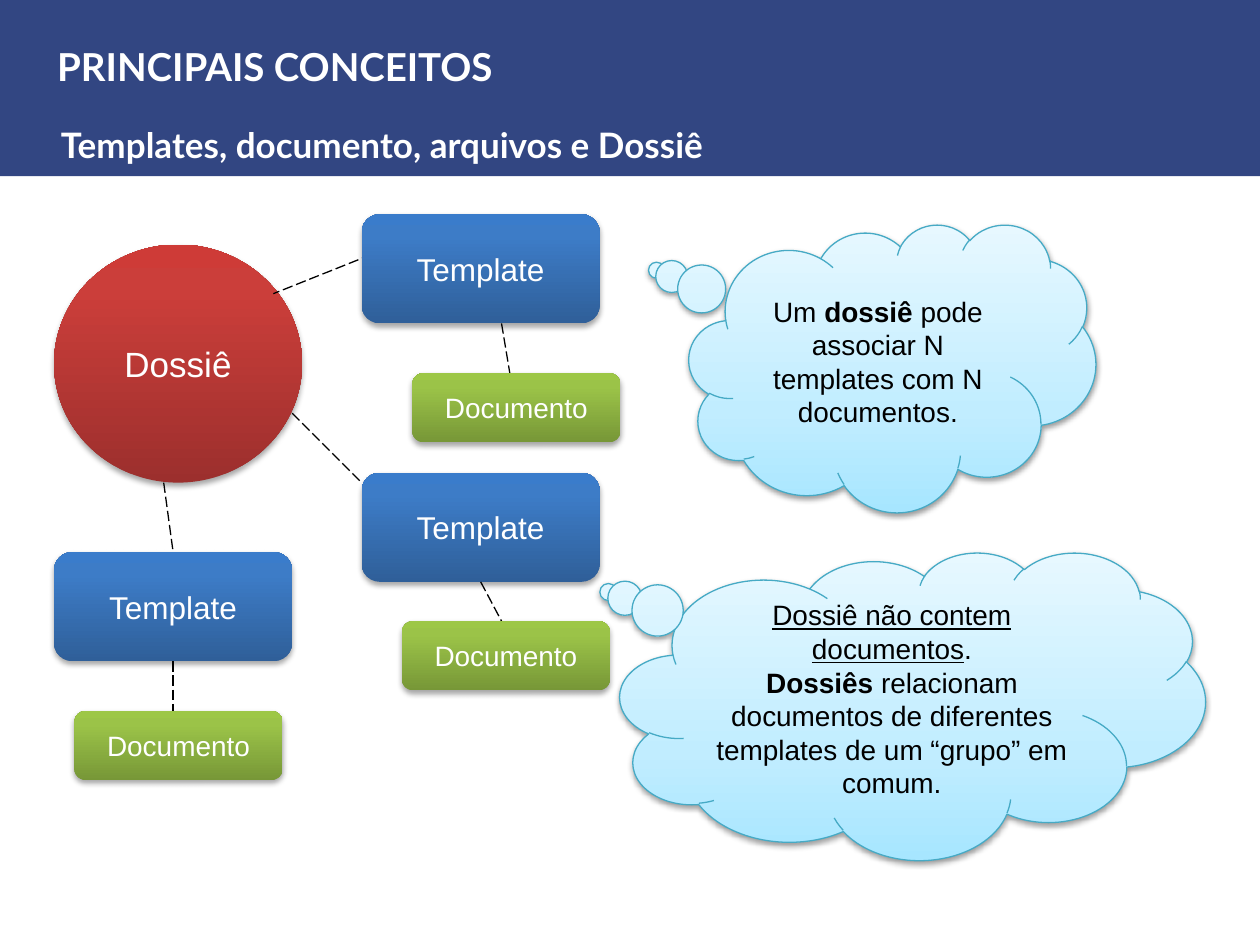
from copy import deepcopy
from lxml.etree import SubElement
from pptx import Presentation
from pptx.dml.color import RGBColor
from pptx.enum.dml import MSO_LINE
from pptx.enum.shapes import MSO_CONNECTOR, MSO_SHAPE
from pptx.enum.text import MSO_ANCHOR, MSO_AUTO_SIZE, PP_ALIGN
from pptx.oxml.ns import qn
from pptx.util import Cm, Pt


def color(value):
    """Turn a hex string into a colour."""
    return RGBColor.from_string(value)


class ConceptSlide:
    """Hold the style of the concept map and the slide being drawn."""

    navy, white, black, cloud_edge = "324682", "FFFFFF", "000000", "46AAC5"
    red = [(0, "9C2F2D"), (0.8, "CB3E3A"), (1, "CE3B37")]
    blue = [(0, "2F5F99"), (0.8, "3D7CC7"), (1, "3A7CCB")]
    green = [(0, "779737"), (0.8, "9BC348"), (1, "9DC746")]
    sky = [(0, "A7E6FF"), (0.35, "C1EDFF"), (1, "E7F8FF")]
    heading_font, body_font = "Lato", "Arial"

    def __init__(self, deck):
        """Add a title-only slide to the deck."""
        self.slide = deck.slides.add_slide(deck.slide_layouts[5])

    def run(self, paragraph, text, size, font, ink, bold=False, underline=False):
        """Add one formatted run to a paragraph."""
        run = paragraph.add_run()
        run.text = text
        run.font.size, run.font.name = Pt(size), font
        run.font.bold, run.font.underline = bold, underline
        run.font.color.rgb = color(ink)

    def band(self, width, height):
        """Draw the header band behind the title."""
        band = self.slide.shapes.add_shape(MSO_SHAPE.RECTANGLE, 0, 0, Cm(width), Cm(height))
        band.shadow.inherit = False
        band.fill.solid()
        band.fill.fore_color.rgb = color(self.navy)
        band.line.fill.background()
        self.slide.shapes.title._element.addprevious(band._element)

    def heading(self, holder, text, size, box):
        """Place a header text and return its paragraph."""
        holder.left, holder.top, holder.width, holder.height = map(Cm, box)
        frame = holder.text_frame
        frame.word_wrap = True
        frame.auto_size = MSO_AUTO_SIZE.NONE
        frame.vertical_anchor = MSO_ANCHOR.TOP
        paragraph = frame.paragraphs[0]
        paragraph.alignment = PP_ALIGN.LEFT
        self.run(paragraph, text, size, self.heading_font, self.white, bold=True)
        return paragraph

    def title(self, text, box):
        """Fill and place the title."""
        self.heading(self.slide.shapes.title, text, 22, box)

    def subtitle(self, text, box):
        """Add the second header line."""
        holder = self.slide.shapes.add_textbox(*map(Cm, box))
        self.heading(holder, text, 20, box).line_spacing = Pt(35)

    def shadow(self, shape, distance, opacity):
        """Give a shape a soft shadow below it."""
        shape.shadow.inherit = False
        effects = shape._element.spPr.find(qn("a:effectLst"))
        outer = SubElement(effects, qn("a:outerShdw"), blurRad="40000", dist=str(distance),
                           dir="5400000", rotWithShape="0")
        ink = SubElement(outer, qn("a:srgbClr"), val=self.black)
        SubElement(ink, qn("a:alpha"), val=str(opacity * 1000))

    def node(self, kind, box, paragraphs, size, stops, ink=white, edge=None):
        """Draw a gradient shape with centred text."""
        shape = self.slide.shapes.add_shape(kind, *map(Cm, box))
        shape.fill.gradient()
        shape.fill.gradient_angle = 90
        stop_list = shape._element.spPr.find(".//" + qn("a:gsLst"))
        stop_list.append(deepcopy(stop_list[0]))
        for stop, (position, tone) in zip(shape.fill.gradient_stops, stops):
            stop.position = position
            stop.color.rgb = color(tone)
        if edge:
            shape.line.color.rgb = color(edge)
            shape.line.width = Pt(0.75)
        else:
            shape.line.fill.background()
        self.shadow(shape, 20000 if edge else 23000, 38 if edge else 35)
        frame = shape.text_frame
        frame.word_wrap = True
        frame.vertical_anchor = MSO_ANCHOR.MIDDLE
        for index, runs in enumerate(paragraphs):
            paragraph = frame.add_paragraph() if index else frame.paragraphs[0]
            paragraph.alignment = PP_ALIGN.CENTER
            for text, style in runs:
                self.run(paragraph, text, size, self.body_font, ink, **style)
        return shape

    def dossier(self, left, top):
        """Draw the dossier circle."""
        return self.node(MSO_SHAPE.OVAL, (left, top, 5, 4.8), [[("Dossiê", {})]], 20, self.red)

    def template(self, left, top):
        """Draw a template box."""
        return self.node(MSO_SHAPE.ROUNDED_RECTANGLE, (left, top, 4.8, 2.2),
                         [[("Template", {})]], 18, self.blue)

    def document(self, left, top):
        """Draw a document box."""
        return self.node(MSO_SHAPE.ROUNDED_RECTANGLE, (left, top, 4.2, 1.4),
                         [[("Documento", {})]], 16, self.green)

    def thought(self, box, tail, paragraphs):
        """Draw a thought cloud with its tail."""
        cloud = self.node(MSO_SHAPE.CLOUD_CALLOUT, box, paragraphs, 16, self.sky,
                          self.black, self.cloud_edge)
        cloud.adjustments[0], cloud.adjustments[1] = tail

    def link(self, start, end, source=None, target=None):
        """Draw a dashed link, joined to a source's bottom or a target's top."""
        line = self.slide.shapes.add_connector(MSO_CONNECTOR.STRAIGHT, *map(Cm, start + end))
        line.line.color.rgb = color(self.black)
        line.line.width = Pt(0.75)
        line.line.dash_style = MSO_LINE.LONG_DASH
        SubElement(line._element.spPr, qn("a:effectLst"))
        if source is not None:
            line.begin_connect(source, 2)
        if target is not None:
            line.end_connect(target, 0)


def main():
    """Build the slide and save it."""
    deck = Presentation()
    deck.slide_width, deck.slide_height = Cm(25.4), Cm(19.05)
    page = ConceptSlide(deck)
    bold, underlined = {"bold": True}, {"underline": True}

    page.band(25.4, 3.55)
    page.title("PRINCIPAIS CONCEITOS", (0.9, 0.74, 20.8, 1.2))
    page.subtitle("Templates, documento, arquivos e Dossiê", (0.98, 1.98, 16.87, 1.5))

    page.dossier(1.09, 4.93)
    page.link((5.89, 8.33), (7.29, 9.73))
    page.link((7.49, 5.13), (5.51, 5.92))
    page.thought((13.89, 4.52, 8.2, 5.8), (-0.58, -0.34), [
        [("Um ", {}), ("dossiê", bold), (" pode associar N templates com N documentos.", {})]])
    page.thought((12.5, 11.13, 11.8, 6.2), (-0.52, -0.37), [
        [("Dossiê não contem documentos", underlined), (".", {})],
        [("Dossiês ", bold),
         ("relacionam documentos de diferentes templates de um “grupo” em comum.", {})]])

    page.template(7.29, 4.32)
    middle_template = page.template(7.29, 9.53)
    lower_template = page.template(1.09, 11.13)
    page.link((3.3, 9.73), (3.49, 11.13), target=lower_template)
    page.link((3.49, 13.33), (3.49, 14.33), source=lower_template)
    page.link((9.69, 11.73), (10.11, 12.52), source=middle_template)
    page.link((10.11, 6.52), (10.31, 7.72))
    for left, top in ((1.5, 14.33), (8.1, 12.52), (8.31, 7.52)):
        page.document(left, top)

    deck.save("out.pptx")


if __name__ == "__main__":
    main()
